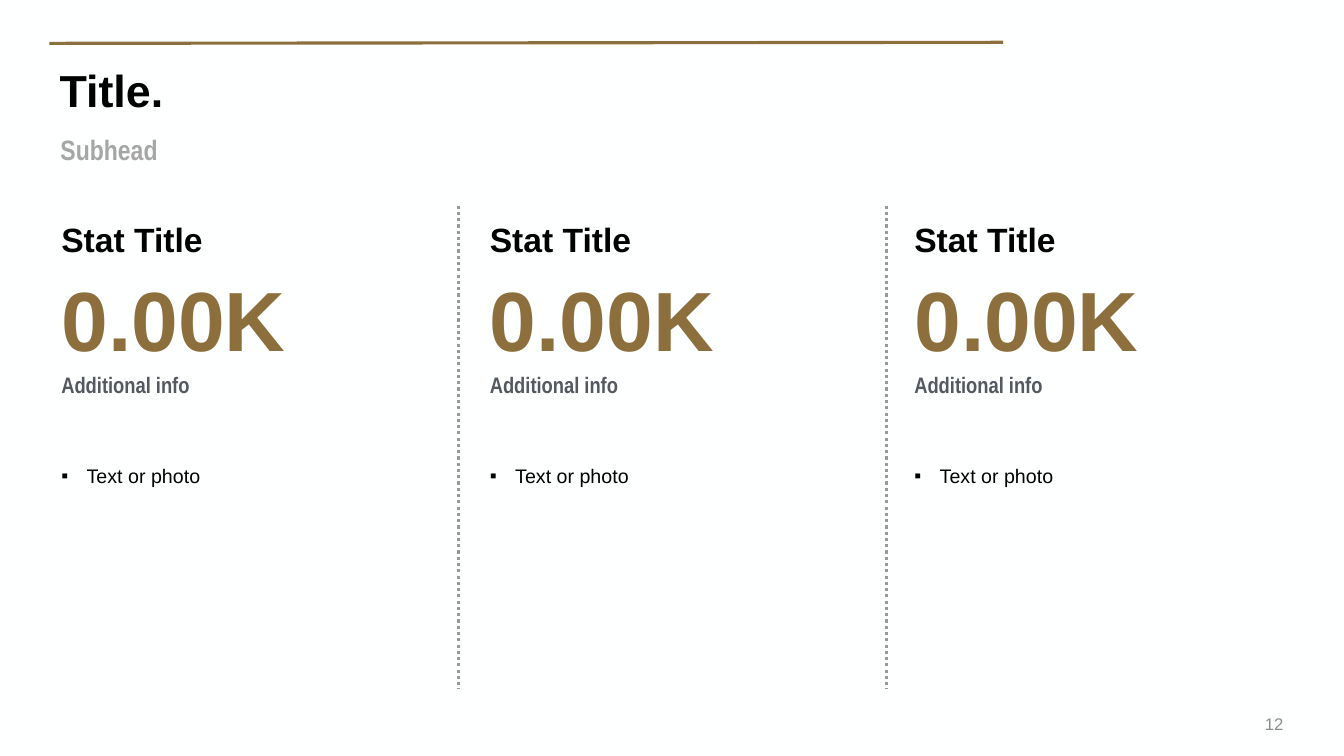
from dataclasses import dataclass

from lxml import etree
from pptx import Presentation
from pptx.dml.color import RGBColor
from pptx.enum.dml import MSO_LINE
from pptx.enum.shapes import MSO_CONNECTOR
from pptx.enum.text import MSO_ANCHOR, MSO_AUTO_SIZE, PP_ALIGN
from pptx.oxml.ns import qn
from pptx.util import Inches, Pt

STRAIGHT = MSO_CONNECTOR.STRAIGHT
DOTTED = MSO_LINE.ROUND_DOT
TOP, MIDDLE = MSO_ANCHOR.TOP, MSO_ANCHOR.MIDDLE
LEFT, RIGHT = PP_ALIGN.LEFT, PP_ALIGN.RIGHT
NO_FIT = MSO_AUTO_SIZE.NONE


@dataclass(frozen=True)
class Style:
    size: int
    color: str
    bold: bool = True
    font: str = "Arial"


@dataclass(frozen=True)
class Theme:
    background: str = "FEFFFF"
    accent: str = "8D6F3D"
    divider: str = "979AA2"
    line_width: float = 2.25
    title: Style = Style(32, "000000")
    subhead: Style = Style(20, "A6A6A6", font="Arial Narrow")
    stat_title: Style = Style(24, "000000")
    stat_value: Style = Style(60, "8D6F3D")
    stat_info: Style = Style(16, "55585F", font="Arial Narrow")
    bullet: Style = Style(14, "000000", bold=False)
    page: Style = Style(12, "8C8C8C", bold=False)


class SlideBuilder:
    def __init__(self, slide, theme):
        self.s = slide
        self.theme = theme
        fill = slide.background.fill
        fill.solid()
        fill.fore_color.rgb = RGBColor.from_string(theme.background)

    def set_text(self, sp, text, style, anchor=TOP, align=LEFT, spacing=0.9):
        tf = sp.text_frame
        tf.text = text
        tf.word_wrap = True
        tf.auto_size = NO_FIT
        tf.vertical_anchor = anchor
        p = tf.paragraphs[0]
        p.alignment = align
        p.line_spacing = spacing
        p.space_before = Pt(0)
        font = p.runs[0].font
        font.name = style.font
        font.size = Pt(style.size)
        font.bold = style.bold
        font.color.rgb = RGBColor.from_string(style.color)
        return p

    def placeholder(self, idx, box, text, style, anchor=TOP):
        sp = next(ph for ph in self.s.placeholders
                  if ph.placeholder_format.idx == idx)
        sp.left, sp.top, sp.width, sp.height = map(Inches, box)
        return self.set_text(sp, text, style, anchor)

    def bullet(self, idx, box, text):
        p = self.placeholder(idx, box, text, self.theme.bullet)
        pPr = p._p.get_or_add_pPr()
        pPr.set("marL", str(Inches(0.25)))
        pPr.set("indent", str(-Inches(0.25)))
        etree.SubElement(pPr, qn("a:buFont")).set("typeface", "Arial")
        etree.SubElement(pPr, qn("a:buChar")).set("char", "▪")

    def text(self, box, text, style, **layout):
        sp = self.s.shapes.add_textbox(*map(Inches, box))
        self.set_text(sp, text, style, **layout)

    def line(self, start, end, color, dash=None):
        cxn = self.s.shapes.add_connector(
            STRAIGHT, *map(Inches, (*start, *end)))
        cxn.line.color.rgb = RGBColor.from_string(color)
        cxn.line.width = Pt(self.theme.line_width)
        if dash is not None:
            cxn.line.dash_style = dash
        etree.SubElement(cxn._element.spPr, qn("a:effectLst"))


def main():
    prs = Presentation()
    prs.slide_width, prs.slide_height = Inches(13.33), Inches(7.5)
    theme = Theme()
    comparison_layout = prs.slide_layouts[4]
    s = SlideBuilder(prs.slides.add_slide(comparison_layout), theme)

    s.line((9.95, 0.42), (0.49, 0.43), theme.accent)
    s.placeholder(0, (0.49, 0.61, 8.53, 0.63), "Title.", theme.title, MIDDLE)
    s.placeholder(1, (0.5, 1.3, 12.33, 0.4), "Subhead", theme.subhead)

    stat_rows = (
        (2.17, 0.43, "Stat Title", theme.stat_title),
        (2.72, 0.82, "0.00K", theme.stat_value),
        (3.66, 0.4, "Additional info", theme.stat_info),
    )
    for idx, x in zip((2, 3, 4), (0.51, 4.76, 8.97)):
        for y, height, text, style in stat_rows:
            s.text((x, y, 3.85, height), text, style)
        s.bullet(idx, (x, 4.58, 3.84, 2.07), "Text or photo")

    for x in (4.55, 8.79):
        s.line((x, 2.04), (x, 6.84), theme.divider, DOTTED)

    s.text((11.63, 6.98, 1.2, 0.4), "12", theme.page,
           anchor=MIDDLE, align=RIGHT, spacing=1.0)
    prs.save("out.pptx")


if __name__ == "__main__":
    main()
